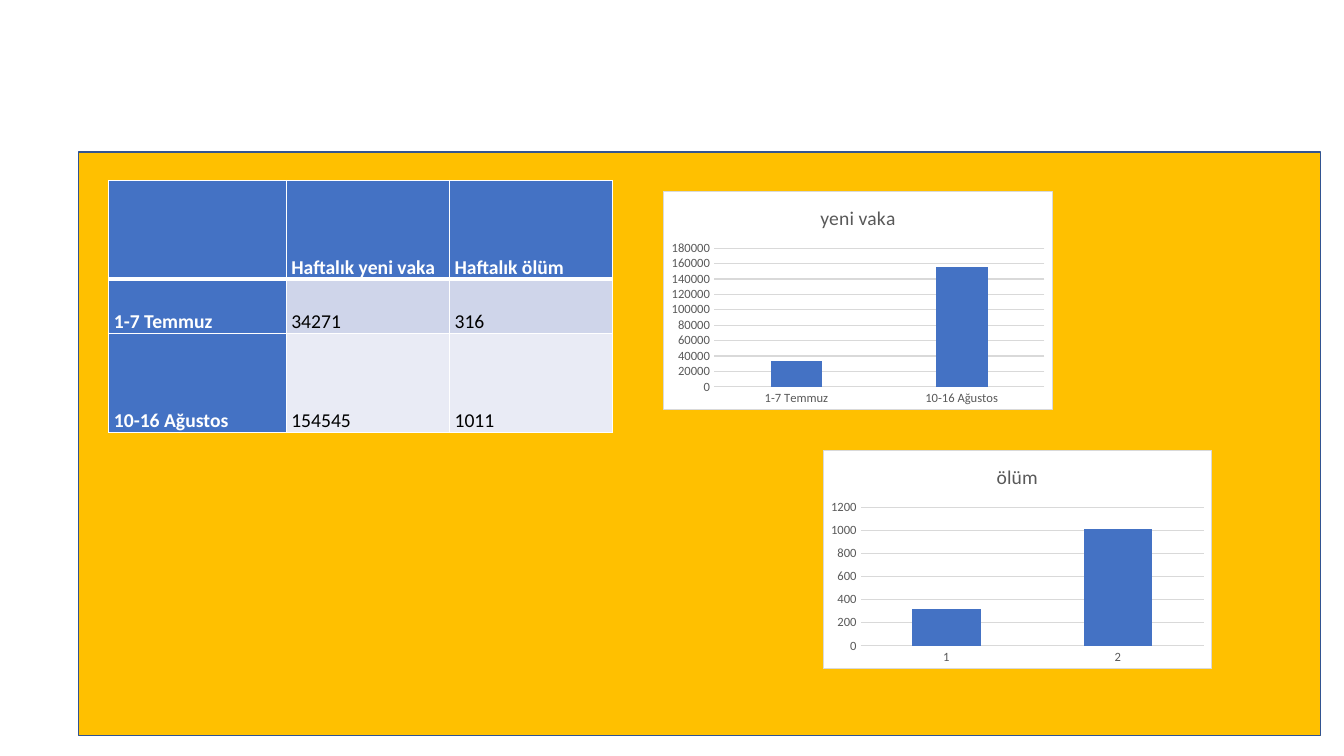
import lxml.etree
import pptx
import pptx.chart.data
import pptx.dml.color
import pptx.enum.chart
import pptx.enum.shapes
import pptx.enum.text
import pptx.oxml
import pptx.oxml.ns
import pptx.util

WIDTH, HEIGHT = pptx.util.Inches(13.333), pptx.util.Inches(7.5)
FONT = "Calibri"
COLORS = {
    "panel": "FFC000", "outline": "325491", "blue": "4472C4",
    "odd row": "CFD5EA", "even row": "E9EBF5",
    "white": "FFFFFF", "black": "000000", "grey": "595959", "rule": "D9D9D9",
}
ROWS = [
    ["", "Haftalık yeni vaka", "Haftalık ölüm"],
    ["1-7 Temmuz", "34271", "316"],
    ["10-16 Ağustos", "154545", "1011"],
]
COLUMN_SHARES = [13.2, 12.15, 12.15]
ROW_SHARES = [13.07, 7.2, 13.07]
CHART_SIZE = (28.96, 29.07)


def across(percent):
    return round(WIDTH * percent / 100)


def down(percent):
    return round(HEIGHT * percent / 100)


def place(left, top, width, height):
    """Turn percentages of the slide into a frame."""
    return across(left), down(top), across(width), down(height)


def color(name):
    return pptx.dml.color.RGBColor.from_string(COLORS[name])


def paint(fill, name):
    fill.solid()
    fill.fore_color.rgb = color(name)


def draw_line(line, name, points):
    paint(line.fill, name)
    line.width = pptx.util.Pt(points)


def set_font(font, size, name, bold=False):
    font.name, font.size, font.bold = FONT, pptx.util.Pt(size), bold
    font.color.rgb = color(name)


def add_panel(page, frame):
    panel = page.shapes.add_shape(pptx.enum.shapes.MSO_SHAPE.RECTANGLE, *frame)
    panel.shadow.inherit = False
    paint(panel.fill, "panel")
    draw_line(panel.line, "outline", 1)


def set_borders(cell, top, bottom):
    """Draw white cell borders, one point wide at the sides."""
    properties = cell._tc.get_or_add_tcPr()
    widths = {"lnL": 1, "lnR": 1, "lnT": top, "lnB": bottom}
    for index, (side, points) in enumerate(widths.items()):
        border = pptx.oxml.parse_xml(
            f'<a:{side} {pptx.oxml.ns.nsdecls("a")} w="{pptx.util.Pt(points)}">'
            f'<a:solidFill><a:srgbClr val="{COLORS["white"]}"/></a:solidFill></a:{side}>')
        properties.insert(index, border)


def fill_cell(cell, text, row, column):
    heading = row == 0 or column == 0
    cell.margin_left = cell.margin_right = pptx.util.Inches(0.05)
    cell.margin_top = cell.margin_bottom = 0
    cell.vertical_anchor = pptx.enum.text.MSO_ANCHOR.BOTTOM
    paint(cell.fill, "blue" if heading else "odd row" if row % 2 else "even row")
    set_borders(cell, top=3 if row == 1 else 1, bottom=3 if row == 0 else 1)
    if text:
        span = cell.text_frame.paragraphs[0].add_run()
        span.text = text
        set_font(span.font, 14, "white" if heading else "black", heading)


def add_case_table(page, left, top):
    frame = place(left, top, sum(COLUMN_SHARES), sum(ROW_SHARES))
    table = page.shapes.add_table(len(ROWS), len(COLUMN_SHARES), *frame).table
    for column, share in zip(table.columns, COLUMN_SHARES):
        column.width = across(share)
    for row, share in zip(table.rows, ROW_SHARES):
        row.height = down(share)
    for row, texts in enumerate(ROWS):
        for column, text in enumerate(texts):
            fill_cell(table.cell(row, column), text, row, column)


def frame_chart(chart):
    """Give the chart area a white fill and a thin grey border."""
    area = pptx.oxml.parse_xml(
        f'<c:spPr {pptx.oxml.ns.nsdecls("c", "a")}>'
        f'<a:solidFill><a:srgbClr val="{COLORS["white"]}"/></a:solidFill>'
        f'<a:ln w="{pptx.util.Pt(0.75)}"><a:solidFill>'
        f'<a:srgbClr val="{COLORS["rule"]}"/></a:solidFill></a:ln></c:spPr>')
    chart._chartSpace.find(pptx.oxml.ns.qn("c:chart")).addnext(area)


def style_axes(chart):
    for axis in (chart.category_axis, chart.value_axis):
        axis.major_tick_mark = pptx.enum.chart.XL_TICK_MARK.NONE
        axis.minor_tick_mark = pptx.enum.chart.XL_TICK_MARK.NONE
        set_font(axis.tick_labels.font, 9, "grey")
    draw_line(chart.category_axis.format.line, "rule", 0.75)
    chart.value_axis.format.line.fill.background()
    chart.value_axis.has_major_gridlines = True
    draw_line(chart.value_axis.major_gridlines.format.line, "rule", 0.75)


def add_column_chart(page, corner, kind, title, values, gap, overlap):
    """Add a titled one-series chart; values maps categories to numbers."""
    data = pptx.chart.data.CategoryChartData()
    data.categories = list(values)
    data.add_series(title, list(values.values()))
    chart = page.shapes.add_chart(kind, *place(*corner, *CHART_SIZE), data).chart
    set_font(chart.font, 10, "black")
    frame_chart(chart)
    chart.has_legend = False
    chart.has_title = True
    span = chart.chart_title.text_frame.paragraphs[0].add_run()
    span.text = title
    set_font(span.font, 14, "grey")
    chart.chart_title.include_in_layout = False
    style_axes(chart)
    plot = chart.plots[0]
    plot.vary_by_categories = False
    plot.gap_width, plot.overlap = gap, overlap
    paint(plot.series[0].format.fill, "blue")


def main():
    deck = pptx.Presentation()
    deck.slide_width, deck.slide_height = WIDTH, HEIGHT
    page = deck.slides.add_slide(deck.slide_layouts[6])
    kinds = pptx.enum.chart.XL_CHART_TYPE
    add_panel(page, place(5.85, 20.13, 92.42, 77.2))
    add_case_table(page, 8.1, 23.87)
    add_column_chart(page, (49.36, 25.2), kinds.COLUMN_CLUSTERED, "yeni vaka",
                     {"1-7 Temmuz": 34000, "10-16 Ağustos": 155000}, 219, -27)
    add_column_chart(page, (61.22, 59.47), kinds.COLUMN_STACKED, "ölüm",
                     {"1": 320, "2": 1010}, 150, 100)
    deck.save("out.pptx")


if __name__ == "__main__":
    main()
